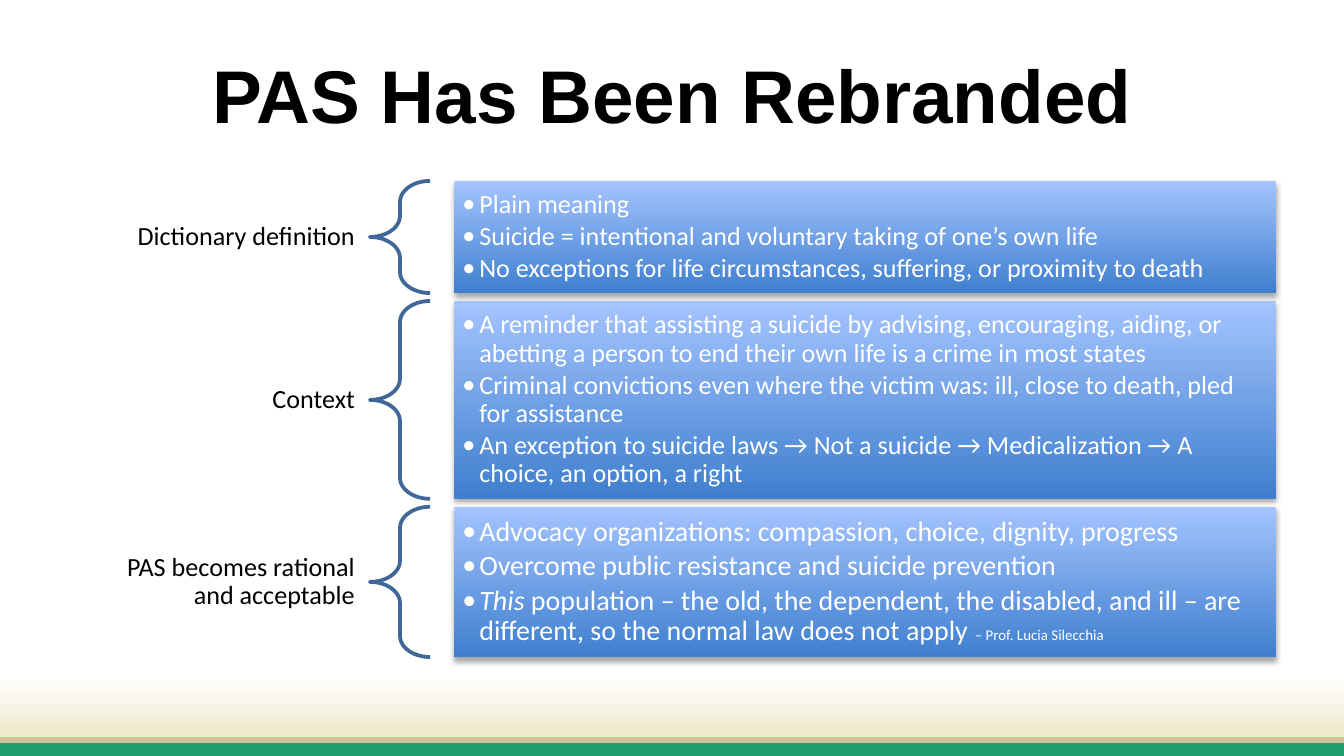
from lxml import etree
from pptx import Presentation
from pptx import util as u
from pptx.dml import color
from pptx.enum import shapes, text
from pptx.oxml import ns

COLOURS = {
    "black": "000000", "white": "FFFFFF", "cream": "EFE8C9", "sand": "CFC493",
    "green": "1D9E6E", "brace": "3F6797",
    "panel top": "A4C4FF", "panel bottom": "3F7FCE",
}
WIDTH, HEIGHT = 25.4, 14.29

TITLE_FONT = {"name": "Arial", "size": u.Pt(40), "bold": True}
LABEL_FONT = {"name": "Calibri", "size": u.Pt(14)}

# Each row: label, height, text size, bullets made of (text, font changes) runs
ROWS = [
    ("Dictionary definition", 2.12, 14, [
        [("Plain meaning", {})],
        [("Suicide = intentional and voluntary taking of one’s own life", {})],
        [("No exceptions for life circumstances, suffering, or proximity to death", {})],
    ]),
    ("Context", 3.74, 14, [
        [("A reminder that assisting a suicide by advising, encouraging, aiding, or "
          "abetting a person to end their own life is a crime in most states", {})],
        [("Criminal convictions even where the victim was: ill, close to death, pled "
          "for assistance", {})],
        [("An exception to suicide laws → Not a suicide → Medicalization → A choice, "
          "an option, a right", {})],
    ]),
    ("PAS becomes rational and acceptable", 2.84, 15, [
        [("Advocacy organizations: compassion, choice, dignity, progress", {})],
        [("Overcome public resistance and suicide prevention", {})],
        [("This", {"italic": True}),
         (" population – the old, the dependent, the disabled, and ill – are different, "
          "so the normal law does not apply ", {}),
         ("– Prof. Lucia Silecchia", {"size": u.Pt(8)})],
    ]),
]


def rgb(name):
    return color.RGBColor.from_string(COLOURS[name])


def set_format(target, values):
    for name, value in values.items():
        setattr(target, name, value)


def add_run(paragraph, words, font, colour):
    run = paragraph.add_run()
    run.text = words
    set_format(run.font, font)
    run.font.color.rgb = rgb(colour)


def set_frame(shape, side, edge):
    frame = shape.text_frame
    set_format(frame, {
        "word_wrap": True, "vertical_anchor": text.MSO_ANCHOR.MIDDLE,
        "margin_left": u.Cm(side), "margin_right": u.Cm(side),
        "margin_top": u.Cm(edge), "margin_bottom": u.Cm(edge),
    })
    return frame


def add_shape(slide, kind, box):
    shape = slide.shapes.add_shape(kind, *map(u.Cm, box))
    shape.shadow.inherit = False
    return shape


def fill_gradient(shape, top, bottom, start=0):
    shape.line.fill.background()
    shape.fill.gradient()
    shape.fill.gradient_angle = 270
    stops = shape.fill.gradient_stops
    for stop, colour, position in zip(stops, (top, bottom), (start, 1)):
        stop.color.rgb = rgb(colour)
        stop.position = position


def add_shadow(shape):
    effects = shape._element.spPr.find(ns.qn("a:effectLst"))
    shadow = etree.SubElement(effects, ns.qn("a:outerShdw"), blurRad=str(u.Pt(3.1)),
                              dist=str(u.Pt(1.8)), dir="5400000", rotWithShape="0")
    tint = etree.SubElement(shadow, ns.qn("a:srgbClr"), val=COLOURS["black"])
    etree.SubElement(tint, ns.qn("a:alpha"), val="35000")


def add_bullet(paragraph):
    properties = paragraph._p.get_or_add_pPr()
    properties.set("marL", str(u.Cm(0.32)))
    properties.set("indent", str(-u.Cm(0.32)))
    etree.SubElement(properties, ns.qn("a:buFont"), typeface="Calibri")
    etree.SubElement(properties, ns.qn("a:buChar"), char="•")


def add_rule(slide, y, width, colour):
    rule = slide.shapes.add_connector(shapes.MSO_CONNECTOR.STRAIGHT,
                                      0, u.Cm(y), u.Cm(WIDTH), u.Cm(y))
    rule.line.width = u.Pt(width)
    rule.line.color.rgb = rgb(colour)
    etree.SubElement(rule._element.spPr, ns.qn("a:effectLst"))


def add_footer(slide, top, height):
    # Fading band and two rules
    band = add_shape(slide, shapes.MSO_SHAPE.RECTANGLE, (0, top, WIDTH, height))
    fill_gradient(band, "white", "cream", start=0.39)
    add_rule(slide, top + 1.94, 3, "sand")
    add_rule(slide, top + 2.14, 8.25, "green")


def add_title(slide, box):
    title = slide.shapes.add_textbox(*map(u.Cm, box))
    paragraph = set_frame(title, 0.25, 0.13).paragraphs[0]
    paragraph.alignment = text.PP_ALIGN.CENTER
    add_run(paragraph, "PAS Has Been Rebranded", TITLE_FONT, "black")


def add_row(slide, left, top, height, label, size, bullets):
    # Label on the left
    box = slide.shapes.add_textbox(*map(u.Cm, (left, top, 5.72, height)))
    paragraph = set_frame(box, 0.28, 0.1).paragraphs[0]
    set_format(paragraph, {"alignment": text.PP_ALIGN.RIGHT, "line_spacing": 0.9})
    add_run(paragraph, label, LABEL_FONT, "black")

    # Brace
    brace = add_shape(slide, shapes.MSO_SHAPE.LEFT_BRACE, (left + 5.72, top, 1.14, height))
    brace.adjustments[0] = 0.35
    brace.fill.background()
    brace.line.width = u.Pt(2)
    brace.line.color.rgb = rgb("brace")

    # Panel with bullets
    panel = add_shape(slide, shapes.MSO_SHAPE.RECTANGLE, (left + 7.32, top, 15.52, height))
    fill_gradient(panel, "panel top", "panel bottom")
    add_shadow(panel)
    frame = set_frame(panel, 0.15, 0.15)
    for index, runs in enumerate(bullets):
        paragraph = frame.add_paragraph() if index else frame.paragraphs[0]
        add_bullet(paragraph)
        set_format(paragraph, {"level": 1, "alignment": text.PP_ALIGN.LEFT,
                               "line_spacing": 0.9, "space_after": u.Pt(size * 0.15)})
        for words, changes in runs:
            font = {"name": "Calibri", "size": u.Pt(size), **changes}
            add_run(paragraph, words, font, "white")


def add_rows(slide, left, top, gap):
    for label, height, size, bullets in ROWS:
        add_row(slide, left, top, height, label, size, bullets)
        top += height + gap


def main():
    presentation = Presentation()
    presentation.slide_width, presentation.slide_height = u.Cm(WIDTH), u.Cm(HEIGHT)
    slide = presentation.slides.add_slide(presentation.slide_layouts[6])
    add_footer(slide, 12.05, 1.9)
    add_title(slide, (1.27, 0.58, 22.86, 2.39))
    add_rows(slide, 1.27, 3.42, 0.15)
    presentation.save("out.pptx")


if __name__ == "__main__":
    main()
